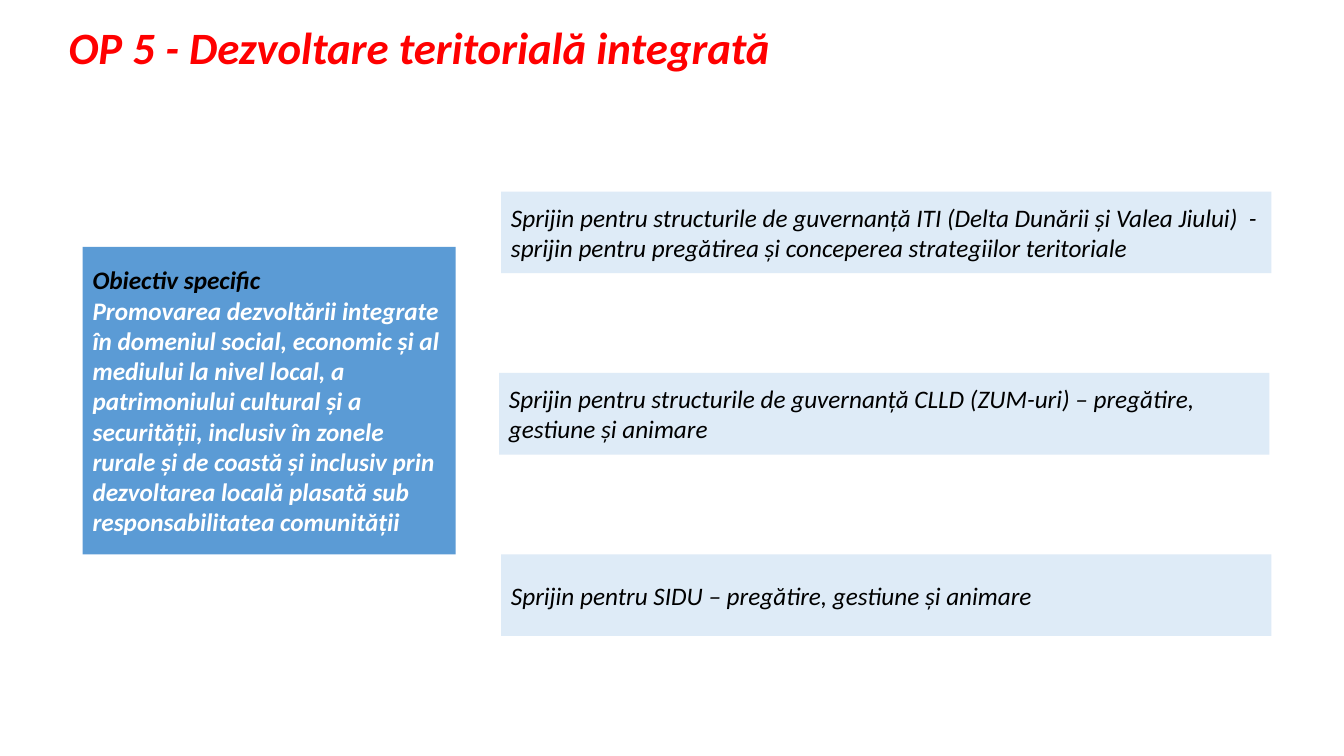
from pptx import Presentation
from pptx.dml.color import RGBColor
from pptx.enum import shapes, text
from pptx.util import Inches, Pt

RED = RGBColor(0xFF, 0x00, 0x00)
BLACK = RGBColor(0x00, 0x00, 0x00)
WHITE = RGBColor(0xFF, 0xFF, 0xFF)
BLUE = RGBColor(0x5B, 0x9B, 0xD5)
PALE_BLUE = RGBColor(0xDE, 0xEB, 0xF7)
FONT = "Calibri"

TITLE = "OP 5 - Dezvoltare teritorială integrată"
OBJECTIVE = [
    ("Obiectiv specific", BLACK),
    ("Promovarea dezvoltării integrate în domeniul social, economic și al "
     "mediului la nivel local, a patrimoniului cultural și a securității, "
     "inclusiv în zonele rurale și de coastă și inclusiv prin dezvoltarea "
     "locală plasată sub responsabilitatea comunității", WHITE),
]
MEASURES = [
    (4.97, "Sprijin pentru structurile de guvernanță ITI (Delta Dunării și Valea Jiului)  - "
           "sprijin pentru pregătirea și conceperea strategiilor teritoriale"),
    (4.95, "Sprijin pentru structurile de guvernanță CLLD (ZUM-uri) – pregătire, "
           "gestiune și animare"),
    (4.97, "Sprijin pentru SIDU – pregătire, gestiune și animare"),
]
FIRST_TOP, MEASURE_STEP = 1.9, 1.8


def write(box, lines, size, bold, inset):
    frame = box.text_frame
    frame.word_wrap = True
    frame.margin_left = frame.margin_right = Inches(inset)
    frame.margin_top = frame.margin_bottom = Inches(inset)
    frame.text = "\n".join(line for line, color in lines)
    for para, (line, color) in zip(frame.paragraphs, lines):
        para.alignment = text.PP_ALIGN.LEFT
        font = para.runs[0].font
        font.name, font.size = FONT, Pt(size)
        font.bold, font.italic = bold, True
        font.color.rgb = color


def add_panel(slide, area, fill, lines, bold):
    panel = slide.shapes.add_shape(shapes.MSO_SHAPE.RECTANGLE, *map(Inches, area))
    panel.shadow.inherit = False
    panel.fill.solid()
    panel.fill.fore_color.rgb = fill
    panel.line.fill.background()
    panel.text_frame.vertical_anchor = text.MSO_ANCHOR.MIDDLE
    write(panel, lines, 18, bold, 0.1)


deck = Presentation()
deck.slide_width, deck.slide_height = Inches(13.33), Inches(7.5)
page = deck.slides.add_slide(deck.slide_layouts[6])

title = page.shapes.add_textbox(*map(Inches, (0.68, 0.26, 12.18, 0.51)))
write(title, [(TITLE, RED)], 32, True, 0)
title.text_frame.paragraphs[0].line_spacing = 0.9

add_panel(page, (0.82, 2.45, 3.7, 3.05), BLUE, OBJECTIVE, True)
for index, (left, measure) in enumerate(MEASURES):
    area = (left, FIRST_TOP + index * MEASURE_STEP, 7.64, 0.81)
    add_panel(page, area, PALE_BLUE, [(measure, BLACK)], False)

deck.save("out.pptx")
